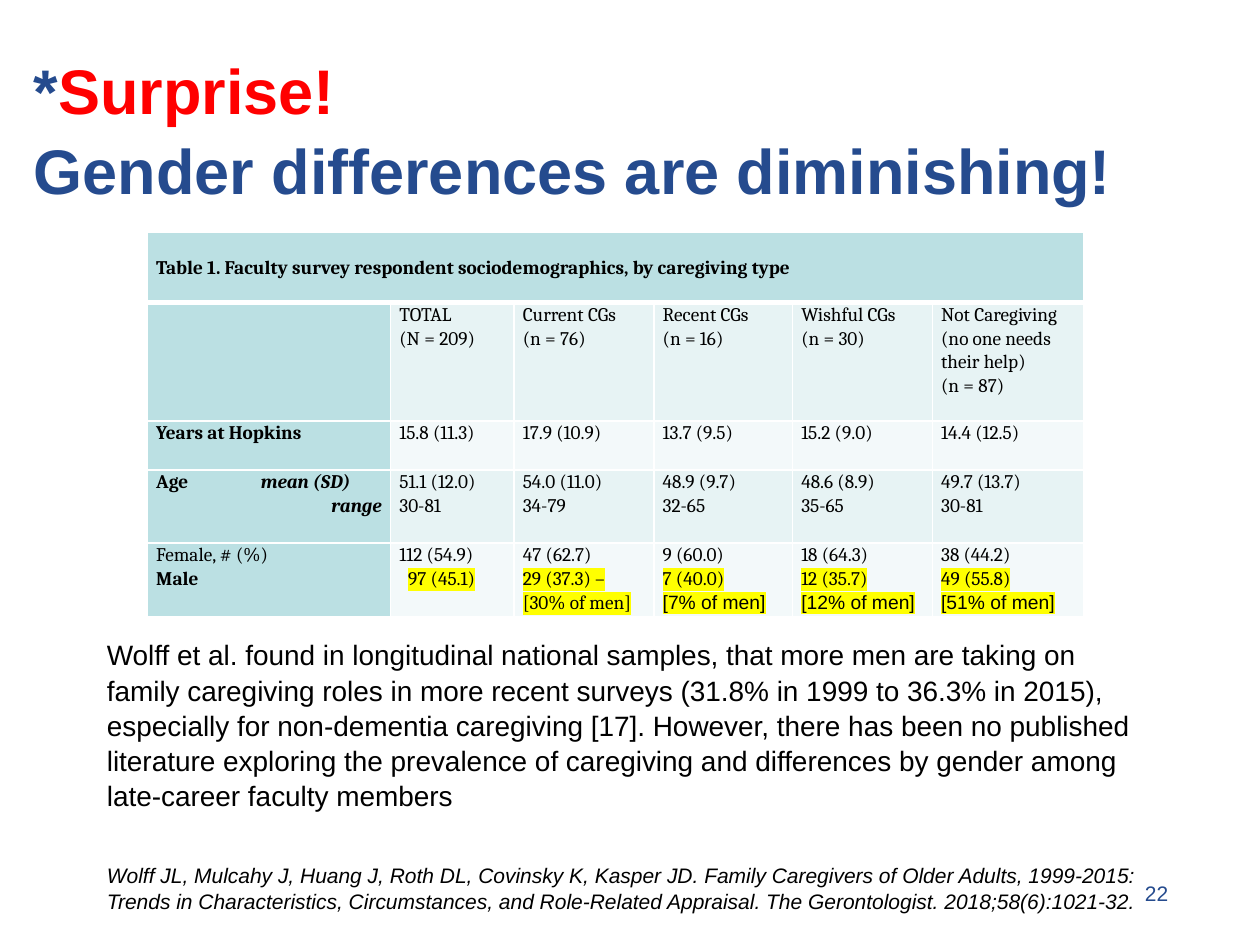
from lxml import etree
from pptx import Presentation
from pptx.dml.color import RGBColor
from pptx.enum.text import MSO_ANCHOR, PP_ALIGN
from pptx.oxml.ns import qn
from pptx.util import Inches, Pt

MIDDLE = MSO_ANCHOR.MIDDLE
RIGHT = PP_ALIGN.RIGHT
NAVY = RGBColor(0x25, 0x4B, 0x8E)
RED = RGBColor(0xFF, 0x00, 0x00)
BLACK = RGBColor(0x00, 0x00, 0x00)
WHITE = RGBColor(0xFF, 0xFF, 0xFF)
YELLOW = RGBColor(0xFF, 0xFF, 0x00)
TEAL = RGBColor(0xBB, 0xE0, 0xE3)
BANDS = [RGBColor(0xF3, 0xF9, 0xFA), RGBColor(0xE7, 0xF3, 0xF4)]

deck = Presentation()
deck.slide_width, deck.slide_height = Inches(10), Inches(7.5)
COLUMN = deck.slide_width / 100
ROW = deck.slide_height / 75
page = deck.slides.add_slide(deck.slide_layouts[6])


def grid(left, top, width, height):
    return int(left * COLUMN), int(top * ROW), int(width * COLUMN), int(height * ROW)


def style(para, size, color, name="Arial", bold=False, italic=False, spacing=1.05):
    para.line_spacing = spacing
    font = para.font
    font.name, font.size, font.bold, font.italic = name, Pt(size), bold, italic
    font.color.rgb = color


title = page.shapes.add_textbox(*grid(1.7, 3.1, 88.3, 12.5)).text_frame
title.word_wrap = True
title.margin_top = Inches(0.07)
heading = title.paragraphs[0]
style(heading, 36, NAVY, bold=True)
heading.add_run().text = "*"
surprise = heading.add_run()
surprise.text = "Surprise!"
surprise.font.color.rgb = RED
heading.add_line_break()
heading.add_run().text = "Gender differences are diminishing!"

body = page.shapes.add_textbox(*grid(7.5, 50, 85, 32.5)).text_frame
body.word_wrap = True
finding = body.paragraphs[0]
finding.text = (
    "Wolff et al. found in longitudinal national samples, that more men are taking on "
    "family caregiving roles in more recent surveys (31.8% in 1999 to 36.3% in 2015), "
    "especially for non-dementia caregiving [17]. However, there has been no published "
    "literature exploring the prevalence of caregiving and differences by gender among "
    "late-career faculty members"
)
style(finding, 16, BLACK)
citation = body.add_paragraph()
citation.text = (
    "Wolff JL, Mulcahy J, Huang J, Roth DL, Covinsky K, Kasper JD. Family Caregivers of "
    "Older Adults, 1999-2015: Trends in Characteristics, Circumstances, and Role-Related "
    "Appraisal. The Gerontologist. 2018;58(6):1021-32."
)
citation.space_before = Pt(28)
style(citation, 12, BLACK, italic=True)

number = page.shapes.add_textbox(*grid(72.9, 69.2, 20.8, 3.3)).text_frame
number.word_wrap = True
number.vertical_anchor = MIDDLE
number.paragraphs[0].text = "22"
number.paragraphs[0].alignment = RIGHT
style(number.paragraphs[0], 12, NAVY, spacing=1)

CELLS = [
    ["Table 1. Faculty survey respondent sociodemographics, by caregiving type"] + [""] * 5,
    ["", "TOTAL\n(N = 209)", "Current CGs\n(n = 76)", "Recent CGs\n(n = 16)",
     "Wishful CGs\n(n = 30)", "Not Caregiving (no one needs their help)\n(n = 87)"],
    ["Years at Hopkins", "15.8 (11.3)", "17.9 (10.9)", "13.7 (9.5)", "15.2 (9.0)", "14.4 (12.5)"],
    ["Age\tmean (SD)\nrange", "51.1 (12.0)\n30-81", "54.0 (11.0)\n34-79",
     "48.9 (9.7)\n32-65", "48.6 (8.9)\n35-65", "49.7 (13.7)\n30-81"],
    ["Female, # (%)\nMale", "112 (54.9)\n97 (45.1)", "47 (62.7)\n29 (37.3) – [30% of men]",
     "9 (60.0)\n7 (40.0)\n[7% of men]", "18 (64.3)\n12 (35.7)\n[12% of men]",
     "38 (44.2)\n49 (55.8)\n[51% of men]"],
]
WIDTHS = [19.3, 9.8, 11.1, 11, 11.1, 12]
HEIGHTS = [5.6, 9.4, 3.9, 5.8, 5.7]
LAST = len(CELLS) - 1

frame = page.shapes.add_table(len(HEIGHTS), len(WIDTHS),
                              *grid(11.7, 18.4, sum(WIDTHS), sum(HEIGHTS)))
table = frame.table
table.first_row = table.horz_banding = False
for column, width in zip(table.columns, WIDTHS):
    column.width = int(width * COLUMN)
for row, height in zip(table.rows, HEIGHTS):
    row.height = int(height * ROW)
table.cell(0, 0).merge(table.cell(0, 5))

for r, texts in enumerate(CELLS):
    for c, text in enumerate(texts):
        cell = table.cell(r, c)
        cell.margin_left = cell.margin_right = Inches(0.07)
        cell.margin_top = cell.margin_bottom = 0
        borders = cell._tc.get_or_add_tcPr()
        for side in ("L", "R", "T", "B"):
            thick = (r, side) in ((0, "B"), (1, "T"))
            line = etree.SubElement(borders, qn("a:ln" + side), w=str(Pt(3 if thick else 1)))
            paint = etree.SubElement(line, qn("a:solidFill"))
            etree.SubElement(paint, qn("a:srgbClr"), val=str(WHITE))
        cell.fill.solid()
        cell.fill.fore_color.rgb = TEAL if r == 0 or c == 0 else BANDS[r % 2]
        if r == 0:
            cell.vertical_anchor = MIDDLE
        for n, words in enumerate(text.split("\n")):
            para = cell.text_frame.paragraphs[0] if n == 0 else cell.text_frame.add_paragraph()
            label, tab, detail = words.partition("\t")
            if tab:
                stops = etree.SubElement(para._p.get_or_add_pPr(), qn("a:tabLst"))
                etree.SubElement(stops, qn("a:tab"), pos=str(Inches(0.83)), algn="l")
            if words == "range":
                para.alignment = RIGHT
            if words.startswith("97"):
                para._p.get_or_add_pPr().set("marL", str(Inches(0.07)))
            style(para, 11, BLACK, "Arial" if r == LAST and n == 2 else "Cambria",
                  bold=c == 0 and not words.startswith("Female"),
                  italic=words == "range", spacing=1.07)
            if not words:
                continue
            span = para.add_run()
            span.text = label + tab
            if detail:
                measure = para.add_run()
                measure.text = detail
                measure.font.italic = True
            if r == LAST and c > 0 and n > 0:
                marker = etree.SubElement(span._r.get_or_add_rPr(), qn("a:highlight"))
                etree.SubElement(marker, qn("a:srgbClr"), val=str(YELLOW))

deck.save("out.pptx")
